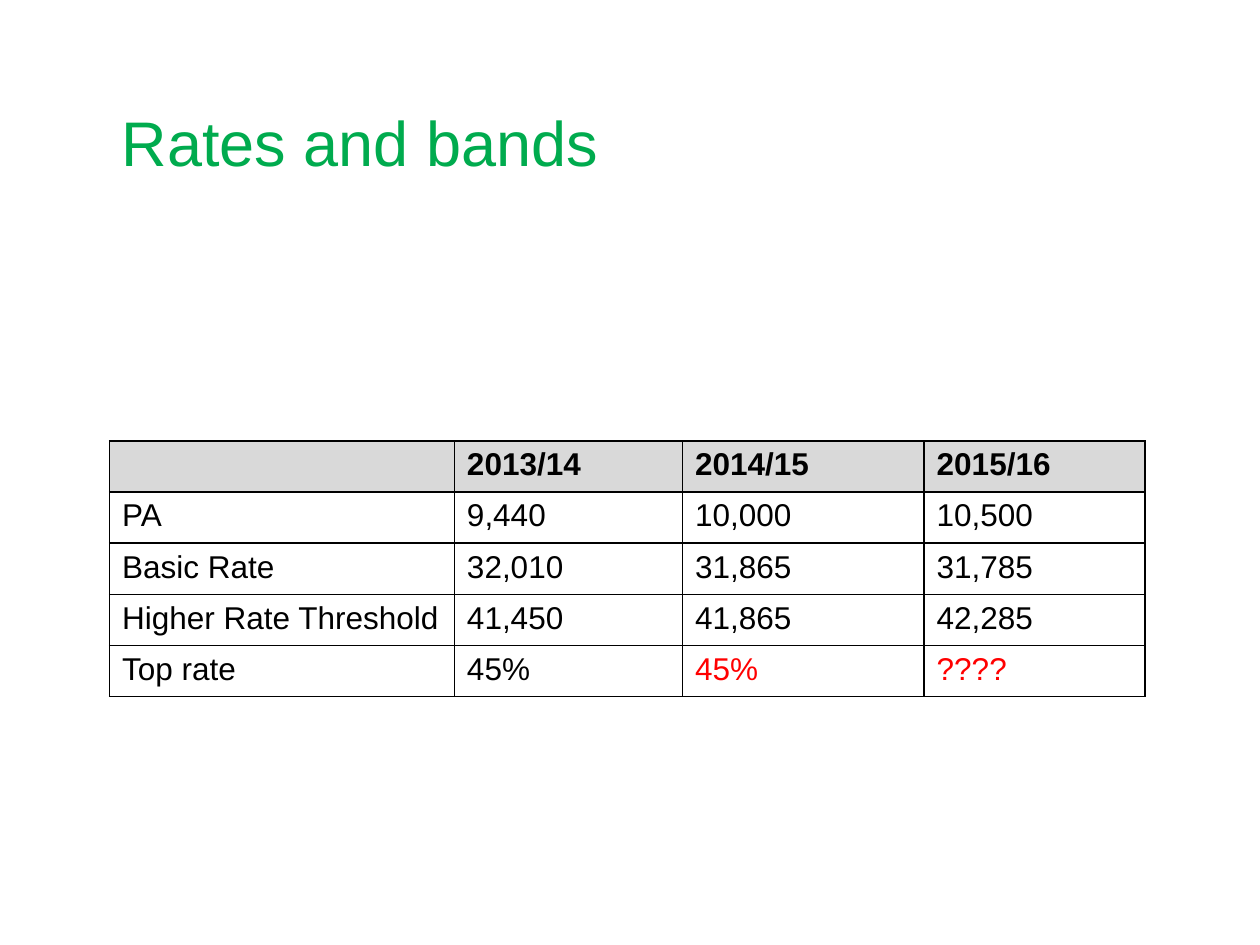
from lxml.etree import SubElement
from pptx import Presentation
from pptx.dml.color import RGBColor
from pptx.enum.text import MSO_ANCHOR
from pptx.oxml.ns import qn
from pptx.util import Cm, Pt

TITLE = "Rates and bands"
ROWS = [
    ["", "2013/14", "2014/15", "2015/16"],
    ["PA", "9,440", "10,000", "10,500"],
    ["Basic Rate", "32,010", "31,865", "31,785"],
    ["Higher Rate Threshold", "41,450", "41,865", "42,285"],
    ["Top rate", "45%", "45%", "????"],
]
UNCERTAIN_CELLS = {(4, 2), (4, 3)}
COLUMN_WIDTHS = [6.95, 4.6, 4.87, 4.45]
ROW_HEIGHT = 1.03
LEFT = 2.21
TABLE_TOP = 8.89
GREEN, BLACK, RED, GREY, WHITE = "00AB4E", "000000", "FF0000", "D9D9D9", "FFFFFF"


def color(value):
    return RGBColor.from_string(value)


def set_font(para, size, font_color, bold=False):
    para.font.name = "Arial"
    para.font.size = Pt(size)
    para.font.bold = bold
    para.font.color.rgb = color(font_color)


def add_borders(cell):
    properties = cell._tc.get_or_add_tcPr()
    for side in ("a:lnL", "a:lnR", "a:lnT", "a:lnB"):
        line = SubElement(properties, qn(side), w=str(Pt(1)))
        fill = SubElement(line, qn("a:solidFill"))
        SubElement(fill, qn("a:srgbClr"), val=BLACK)


def add_title(page):
    box = page.shapes.add_textbox(Cm(LEFT), Cm(0.79), Cm(22.86), Cm(4.11))
    frame = box.text_frame
    frame.word_wrap = True
    frame.vertical_anchor = MSO_ANCHOR.MIDDLE
    frame.text = TITLE
    set_font(frame.paragraphs[0], 36, GREEN)


def add_rates_table(page):
    table = page.shapes.add_table(
        len(ROWS), len(COLUMN_WIDTHS), Cm(LEFT), Cm(TABLE_TOP),
        Cm(sum(COLUMN_WIDTHS)), Cm(ROW_HEIGHT * len(ROWS))).table
    table.horz_banding = False
    for column, width in zip(table.columns, COLUMN_WIDTHS):
        column.width = Cm(width)
    for row_index, values in enumerate(ROWS):
        header = row_index == 0
        table.rows[row_index].height = Cm(ROW_HEIGHT)
        for column_index, value in enumerate(values):
            cell = table.cell(row_index, column_index)
            cell.text = value
            uncertain = (row_index, column_index) in UNCERTAIN_CELLS
            set_font(cell.text_frame.paragraphs[0], 18, RED if uncertain else BLACK, header)
            add_borders(cell)
            cell.fill.solid()
            cell.fill.fore_color.rgb = color(GREY if header else WHITE)


def main():
    deck = Presentation()
    deck.slide_width, deck.slide_height = Cm(25.4), Cm(19.05)
    page = deck.slides.add_slide(deck.slide_layouts[6])
    add_rates_table(page)
    add_title(page)
    deck.save("out.pptx")


if __name__ == "__main__":
    main()
